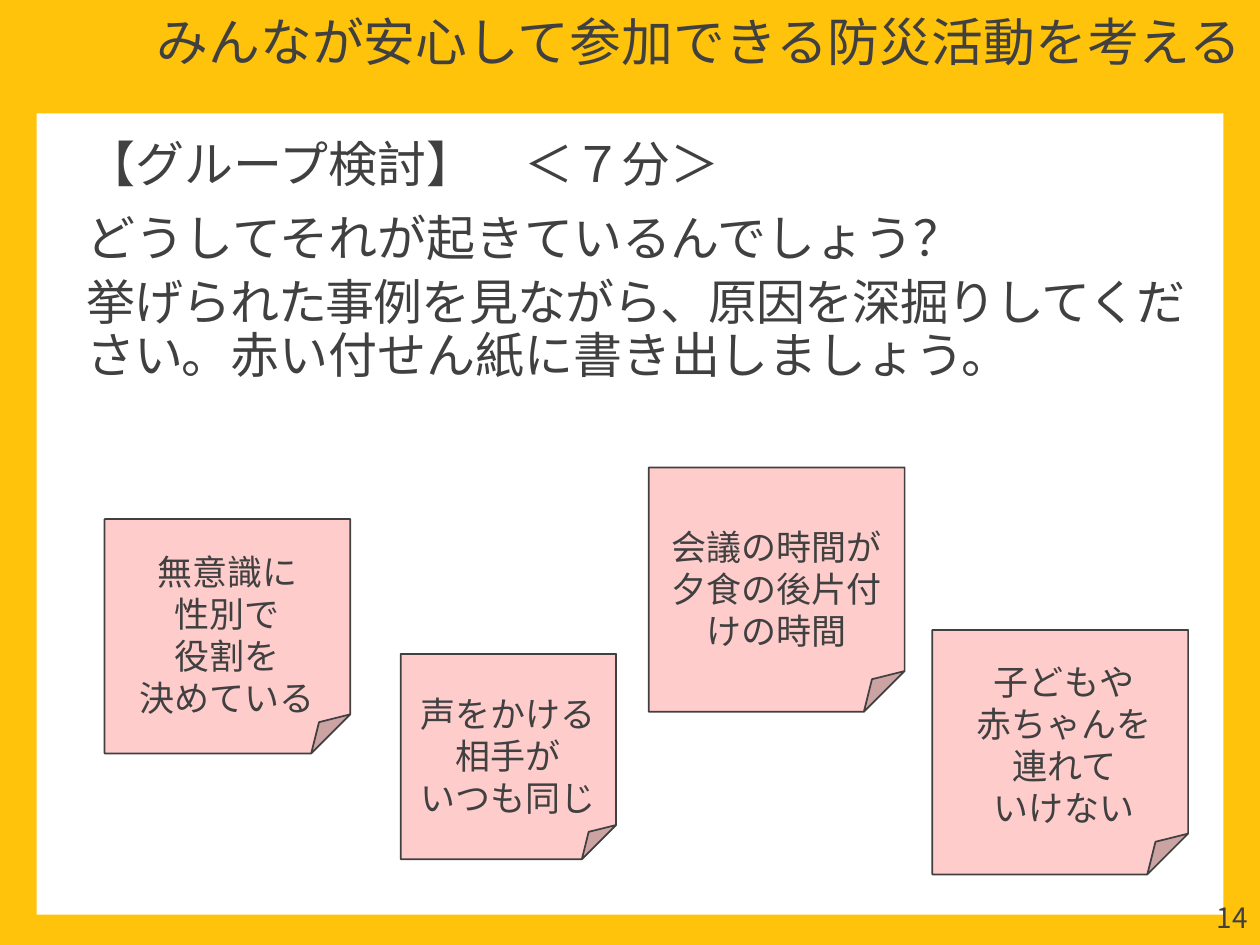
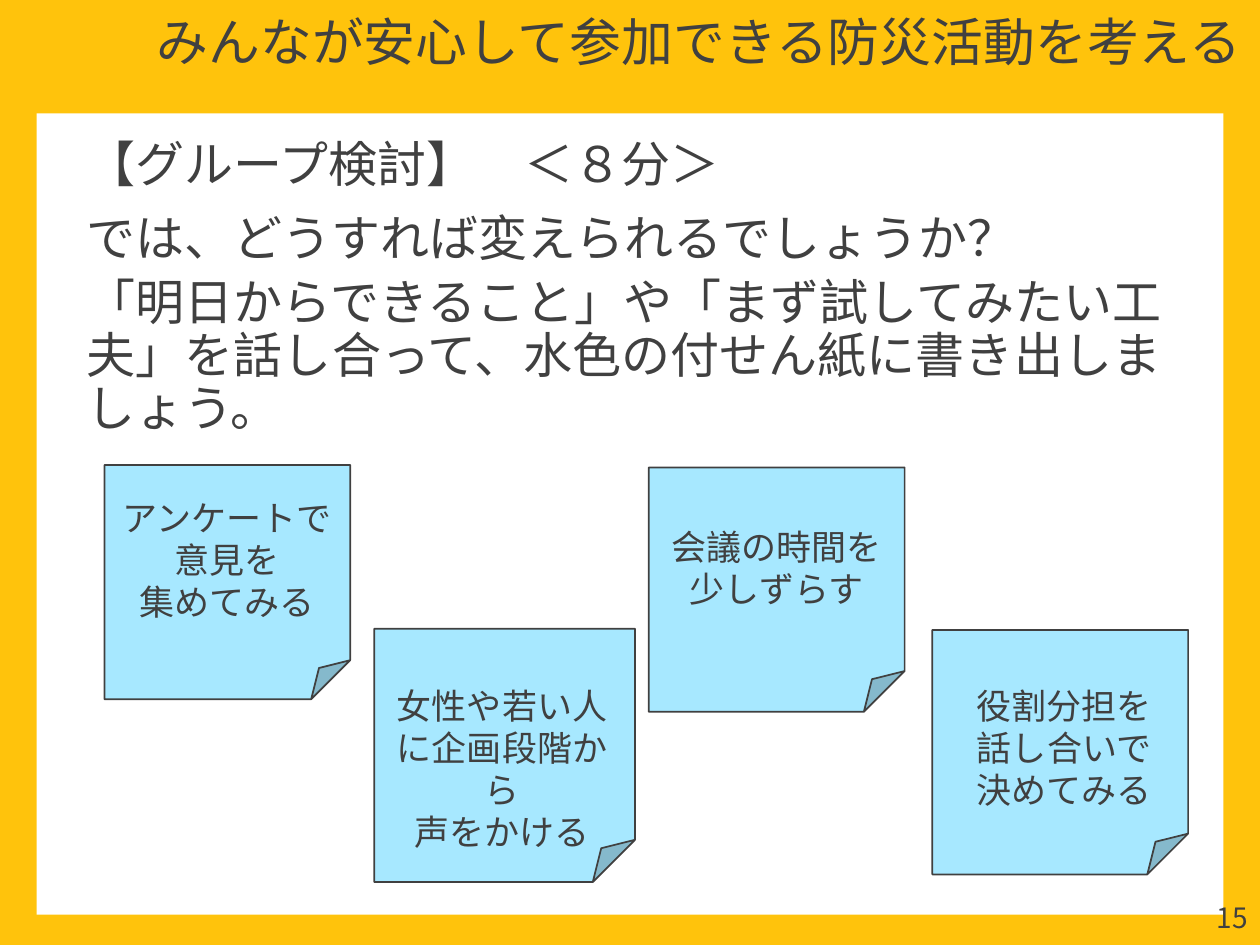
from lxml.etree import SubElement
from pptx import Presentation
from pptx.dml.color import RGBColor
from pptx.enum.shapes import MSO_SHAPE as Preset
from pptx.enum.text import MSO_ANCHOR as Anchor, MSO_AUTO_SIZE as AutoSize, PP_ALIGN as Align
from pptx.oxml.ns import qn
from pptx.util import Inches, Pt

FONT = "Noto Sans CJK JP"
YELLOW, WHITE, INK = "FFC30C", "FFFFFF", "404040"
PINK, AQUA = "FFCCCC", "A7E8FF"
LINE_HEIGHT = 1.2
TITLE = "みんなが安心して参加できる防災活動を考える"

presentation = Presentation()
presentation.slide_width, presentation.slide_height = Inches(10), Inches(7.5)
COLUMN = presentation.slide_width // 100
ROW = presentation.slide_height // 75


def color(hex_string):
    return RGBColor.from_string(hex_string)


def add_text(slide, box, paragraphs, size, align, tightness=1.0):
    """Add a text box at (column, row, columns, rows); each paragraph is a list of runs."""
    left, top, width, height = box
    shape = slide.shapes.add_textbox(left * COLUMN, top * ROW, width * COLUMN, height * ROW)
    frame = shape.text_frame
    frame.word_wrap = True
    frame.vertical_anchor = Anchor.TOP
    for index, runs in enumerate(paragraphs):
        paragraph = frame.paragraphs[0] if index == 0 else frame.add_paragraph()
        paragraph.alignment = align
        paragraph.line_spacing = Pt(size * LINE_HEIGHT * tightness)
        for text in runs:
            run = paragraph.add_run()
            run.text = text
            run.font.size = Pt(size)
            run.font.name = FONT
            run.font.color.rgb = color(INK)
            SubElement(run._r.get_or_add_rPr(), qn("a:ea"), typeface=FONT)
    return frame


# Each note: the sheet's box, the box of its text, its lines
SLIDES = [
    {
        "number": "14",
        "note_color": PINK,
        "body_width": 89,
        "body": [
            ["【グループ検討】　＜７分＞"],
            ["どうしてそれが起きているんでしょう？"],
            ["挙げられた事例を見ながら、原因を深掘りしてください。", "赤い付せん紙に書き出しましょう。"],
        ],
        "notes": [
            ((8.3, 41.2, 19.5, 18.6), (6.8, 43.2, 22.5, 14.5),
             ["無意識に", "性別で", "役割を", "決めている"]),
            ((31.8, 51.9, 17.1, 16.3), (30.3, 54.5, 20.1, 11.1),
             ["声をかける", "相手が", "いつも同じ"]),
            ((51.5, 37.1, 20.3, 19.4), (51.6, 41.2, 20.1, 11.1),
             ["会議の時間が", "夕食の後片付けの時間"]),
            ((74, 50, 20.3, 19.4), (74.4, 51.9, 20.1, 14.5),
             ["子どもや", "赤ちゃんを", "連れて", "いけない"]),
        ],
    },
    {
        "number": "15",
        "note_color": AQUA,
        "body_width": 87.3,
        "body": [
            ["【グループ検討】　＜８分＞"],
            ["では、どうすれば変えられるでしょうか？"],
            ["「明日からできること」や「まず試してみたい工夫」を話し合って、水色の付せん紙に書き出しましょう。"],
        ],
        "notes": [
            ((8.3, 36.9, 19.5, 18.6), (6.8, 38.9, 22.5, 11.1),
             ["アンケートで", "意見を", "集めてみる"]),
            ((29.7, 49.9, 20.7, 20.1), (29.3, 53.8, 21.1, 14.5),
             ["女性や若い人に企画段階から", "声をかける"]),
            ((51.5, 37.1, 20.3, 19.4), (51.6, 41.2, 20.1, 7.7),
             ["会議の時間を少しずらす"]),
            ((74, 50, 20.3, 19.4), (74.4, 53.8, 20.1, 11.1),
             ["役割分担を", "話し合いで", "決めてみる"]),
        ],
    },
]

background = presentation.slide_master.background.fill
background.solid()
background.fore_color.rgb = color(YELLOW)

for content in SLIDES:
    slide = presentation.slides.add_slide(presentation.slide_layouts[6])

    # White panel, title and page number
    panel = slide.shapes.add_shape(Preset.RECTANGLE, 2.9 * COLUMN, 9 * ROW, 94.2 * COLUMN, 63.6 * ROW)
    panel.shadow.inherit = False
    panel.fill.solid()
    panel.fill.fore_color.rgb = color(WHITE)
    panel.line.fill.background()
    add_text(slide, (11, 0.8, 89, 8.8), [[TITLE]], 29.6, Align.CENTER, 0.9)
    add_text(slide, (77.5, 71, 22.5, 4), [[content["number"]]], 16, Align.RIGHT)

    # Task description
    body = add_text(slide, (5.9, 10.6, content["body_width"], 60.4), content["body"],
                    28, Align.JUSTIFY, 0.9)
    heading, question, request = body.paragraphs
    heading.space_before = Pt(10)
    heading.space_after = Pt(6)
    for paragraph in (question, request):
        paragraph.space_before = Pt(6)
    for run in request.runs[:-1]:
        run._r.get_or_add_rPr().set("spc", "-80")

    # Sticky notes
    for (left, top, width, height), text_box, lines in content["notes"]:
        note = slide.shapes.add_shape(Preset.FOLDED_CORNER, left * COLUMN, top * ROW,
                                      width * COLUMN, height * ROW)
        note.shadow.inherit = False
        note.fill.solid()
        note.fill.fore_color.rgb = color(content["note_color"])
        note.line.color.rgb = color(INK)
        note.line.width = Pt(1)
        frame = add_text(slide, text_box, [[line] for line in lines], 20, Align.CENTER)
        frame.auto_size = AutoSize.SHAPE_TO_FIT_TEXT

presentation.save("out.pptx")
